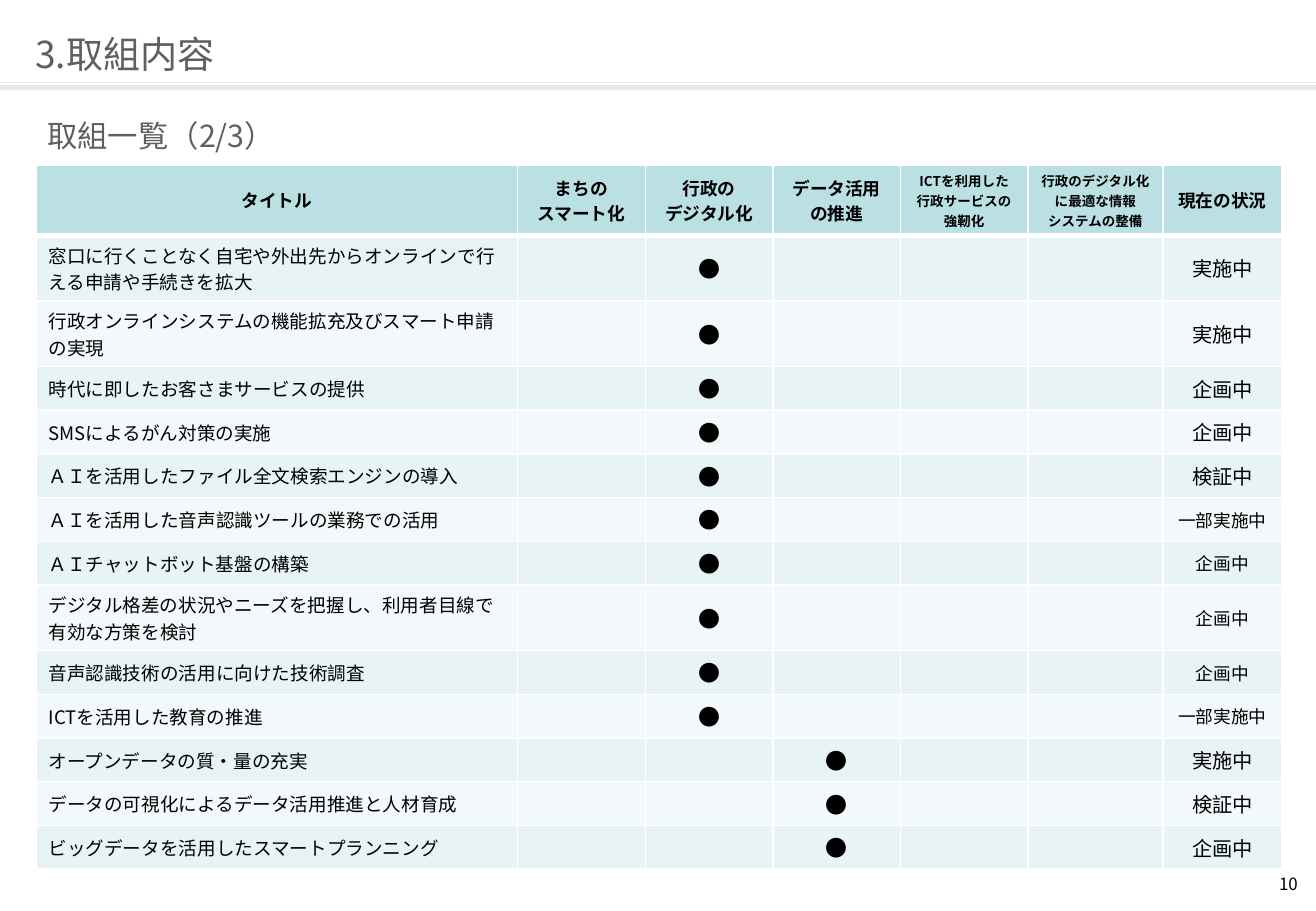
from dataclasses import dataclass
from typing import NamedTuple

from lxml import etree
from pptx import Presentation
from pptx.dml.color import RGBColor
from pptx.enum.shapes import MSO_CONNECTOR, MSO_SHAPE
from pptx.enum.text import MSO_ANCHOR, MSO_AUTO_SIZE, PP_ALIGN
from pptx.oxml.ns import qn
from pptx.util import Emu, Inches, Pt

LEFT, CENTER, RIGHT = PP_ALIGN.LEFT, PP_ALIGN.CENTER, PP_ALIGN.RIGHT
TOP, MIDDLE = MSO_ANCHOR.TOP, MSO_ANCHOR.MIDDLE
RECTANGLE, STRAIGHT = MSO_SHAPE.RECTANGLE, MSO_CONNECTOR.STRAIGHT
NO_AUTOFIT = MSO_AUTO_SIZE.NONE
TITLE_ONLY = 5

SLIDE_WIDTH, SLIDE_HEIGHT = Inches(10.83), Inches(7.5)
FONT = "Noto Sans CJK JP"
BLACK, GRAY, RULE, WHITE = "000000", "5F5F5F", "EAEAEA", "FFFFFF"
HEADER_FILL, ROW_FILLS = "BBE0E3", ("E7F3F4", "F3F9FA")

# Table grid in inches
COLUMN_WIDTHS = (3.96, 1.05, 1.05, 1.05, 1.05, 1.11, 0.98)
HEADER_HEIGHT, SINGLE_HEIGHT, DOUBLE_HEIGHT = 0.58, 0.36, 0.54
STATUS_COLUMN = len(COLUMN_WIDTHS) - 1
CITY, DIGITAL, DATA = 1, 2, 3


class Box(NamedTuple):
    """Position and size in percent of the slide."""
    left: float
    top: float
    width: float
    height: float

    def lengths(self) -> tuple[Emu, Emu, Emu, Emu]:
        return (share(self.left, SLIDE_WIDTH), share(self.top, SLIDE_HEIGHT),
                share(self.width, SLIDE_WIDTH), share(self.height, SLIDE_HEIGHT))


@dataclass(frozen=True)
class TextStyle:
    size: float
    color: str = BLACK
    bold: bool = False
    align: PP_ALIGN = LEFT
    anchor: MSO_ANCHOR = MIDDLE
    spacing: float = 1.0


@dataclass(frozen=True)
class Initiative:
    title: str
    field: int
    status: str
    status_size: float = 12
    height: float = SINGLE_HEIGHT


HEADERS = (
    ("タイトル", 10.5),
    ("まちの\vスマート化", 10.5),
    ("行政の\vデジタル化", 10.5),
    ("データ活用の推進", 10.5),
    ("ICTを利用した\n行政サービスの強靭化", 8),
    ("行政のデジタル化に最適な情報\vシステムの整備", 8),
    ("現在の状況", 10.5),
)
INITIATIVES = (
    Initiative("窓口に行くことなく自宅や外出先からオンラインで行える申請や手続きを拡大",
               DIGITAL, "実施中", height=DOUBLE_HEIGHT),
    Initiative("行政オンラインシステムの機能拡充及びスマート申請の実現",
               DIGITAL, "実施中", height=DOUBLE_HEIGHT),
    Initiative("時代に即したお客さまサービスの提供", DIGITAL, "企画中"),
    Initiative("SMSによるがん対策の実施", DIGITAL, "企画中"),
    Initiative("ＡＩを活用したファイル全文検索エンジンの導入", DIGITAL, "検証中"),
    Initiative("ＡＩを活用した音声認識ツールの業務での活用", DIGITAL, "一部実施中", 10.5),
    Initiative("ＡＩチャットボット基盤の構築", DIGITAL, "企画中", 10.5),
    Initiative("デジタル格差の状況やニーズを把握し、利用者目線で有効な方策を検討",
               DIGITAL, "企画中", 10.5, DOUBLE_HEIGHT),
    Initiative("音声認識技術の活用に向けた技術調査", DIGITAL, "企画中", 10.5),
    Initiative("ICTを活用した教育の推進", DIGITAL, "一部実施中", 10.5),
    Initiative("オープンデータの質・量の充実", DATA, "実施中"),
    Initiative("データの可視化によるデータ活用推進と人材育成", DATA, "検証中"),
    Initiative("ビッグデータを活用したスマートプランニング", DATA, "企画中"),
)


def share(percent: float, whole: int) -> Emu:
    return Emu(round(whole * percent / 100))


def rgb(value: str) -> RGBColor:
    return RGBColor.from_string(value)


def write(text_frame, text: str, style: TextStyle) -> None:
    text_frame.text = text
    text_frame.vertical_anchor = style.anchor
    text_frame.word_wrap = True
    for paragraph in text_frame.paragraphs:
        paragraph.alignment = style.align
        paragraph.line_spacing = style.spacing
        for run in paragraph.runs:
            font = run.font
            font.name, font.size, font.bold = FONT, Pt(style.size), style.bold
            font.color.rgb = rgb(style.color)
            etree.SubElement(font._element, qn("a:ea"), typeface=FONT)
        # An empty cell must not be taller than its row
        if not paragraph.runs:
            etree.SubElement(paragraph._p, qn("a:endParaRPr"),
                             sz=str(round(style.size * 100)))


def place(shape, box: Box) -> None:
    shape.left, shape.top, shape.width, shape.height = box.lengths()


def clear_margins(text_frame) -> None:
    text_frame.margin_left = text_frame.margin_right = 0
    text_frame.margin_top = text_frame.margin_bottom = 0


def add_text(slide, box: Box, text: str, style: TextStyle):
    shape = slide.shapes.add_textbox(*box.lengths())
    write(shape.text_frame, text, style)
    return shape


def format_cell(cell, text: str, style: TextStyle, fill: str, bottom: float) -> None:
    write(cell.text_frame, text, style)
    cell.vertical_anchor = style.anchor
    cell.fill.solid()
    cell.fill.fore_color.rgb = rgb(fill)
    properties = cell._tc.get_or_add_tcPr()
    sides = (("lnL", 1), ("lnR", 1), ("lnT", 1), ("lnB", bottom))
    for index, (side, width) in enumerate(sides):
        border = etree.Element(qn(f"a:{side}"), w=str(Pt(width)))
        solid = etree.SubElement(border, qn("a:solidFill"))
        etree.SubElement(solid, qn("a:srgbClr"), val=WHITE)
        properties.insert(index, border)


def add_title(slide) -> None:
    title = slide.shapes.title
    place(title, Box(2.68, 3.2, 91.87, 5.47))
    write(title.text_frame, "3.取組内容", TextStyle(22, GRAY))
    title.text_frame.auto_size = NO_AUTOFIT
    clear_margins(title.text_frame)


def add_title_rule(slide) -> None:
    height = share(9.07, SLIDE_HEIGHT)
    line = slide.shapes.add_connector(STRAIGHT, 0, height, SLIDE_WIDTH, height)
    line.line.color.rgb = rgb(RULE)
    line.line.width = Pt(0.75)
    etree.SubElement(line._element.spPr, qn("a:effectLst"))
    bar = slide.shapes.add_shape(RECTANGLE, *Box(0, 9.33, 100, 0.53).lengths())
    bar.shadow.inherit = False
    bar.fill.solid()
    bar.fill.fore_color.rgb = rgb(RULE)
    bar.line.fill.background()


def add_initiative_table(slide) -> None:
    heights = [HEADER_HEIGHT, *(item.height for item in INITIATIVES)]
    frame = slide.shapes.add_table(
        len(heights), len(COLUMN_WIDTHS),
        share(2.77, SLIDE_WIDTH), share(18.1, SLIDE_HEIGHT),
        Inches(sum(COLUMN_WIDTHS)), Inches(sum(heights)))
    table = frame.table
    for column, width in zip(table.columns, COLUMN_WIDTHS):
        column.width = Inches(width)
    for row, height in zip(table.rows, heights):
        row.height = Inches(height)

    for column, (text, size) in enumerate(HEADERS):
        style = TextStyle(size, bold=True, align=CENTER)
        format_cell(table.cell(0, column), text, style, HEADER_FILL, 3)

    for index, item in enumerate(INITIATIVES):
        filled = {
            0: (item.title, TextStyle(11)),
            item.field: ("●", TextStyle(13, align=CENTER)),
            STATUS_COLUMN: (item.status, TextStyle(item.status_size, align=CENTER)),
        }
        for column in range(len(COLUMN_WIDTHS)):
            text, style = filled.get(column, ("", TextStyle(11)))
            format_cell(table.cell(index + 1, column), text, style,
                        ROW_FILLS[index % 2], 1)


def main() -> None:
    presentation = Presentation()
    presentation.slide_width, presentation.slide_height = SLIDE_WIDTH, SLIDE_HEIGHT
    slide = presentation.slides.add_slide(presentation.slide_layouts[TITLE_ONLY])

    # Heading
    add_title_rule(slide)
    add_title(slide)
    add_text(slide, Box(2.68, 12.13, 94, 5.87), "取組一覧（2/3）",
             TextStyle(18, GRAY, spacing=0.9))

    # List of initiatives
    add_initiative_table(slide)

    # Page number
    page_number = add_text(slide, Box(75.25, 95.87, 23.36, 2.67), "10",
                           TextStyle(10, align=RIGHT, anchor=TOP))
    clear_margins(page_number.text_frame)
    presentation.save("out.pptx")


if __name__ == "__main__":
    main()
